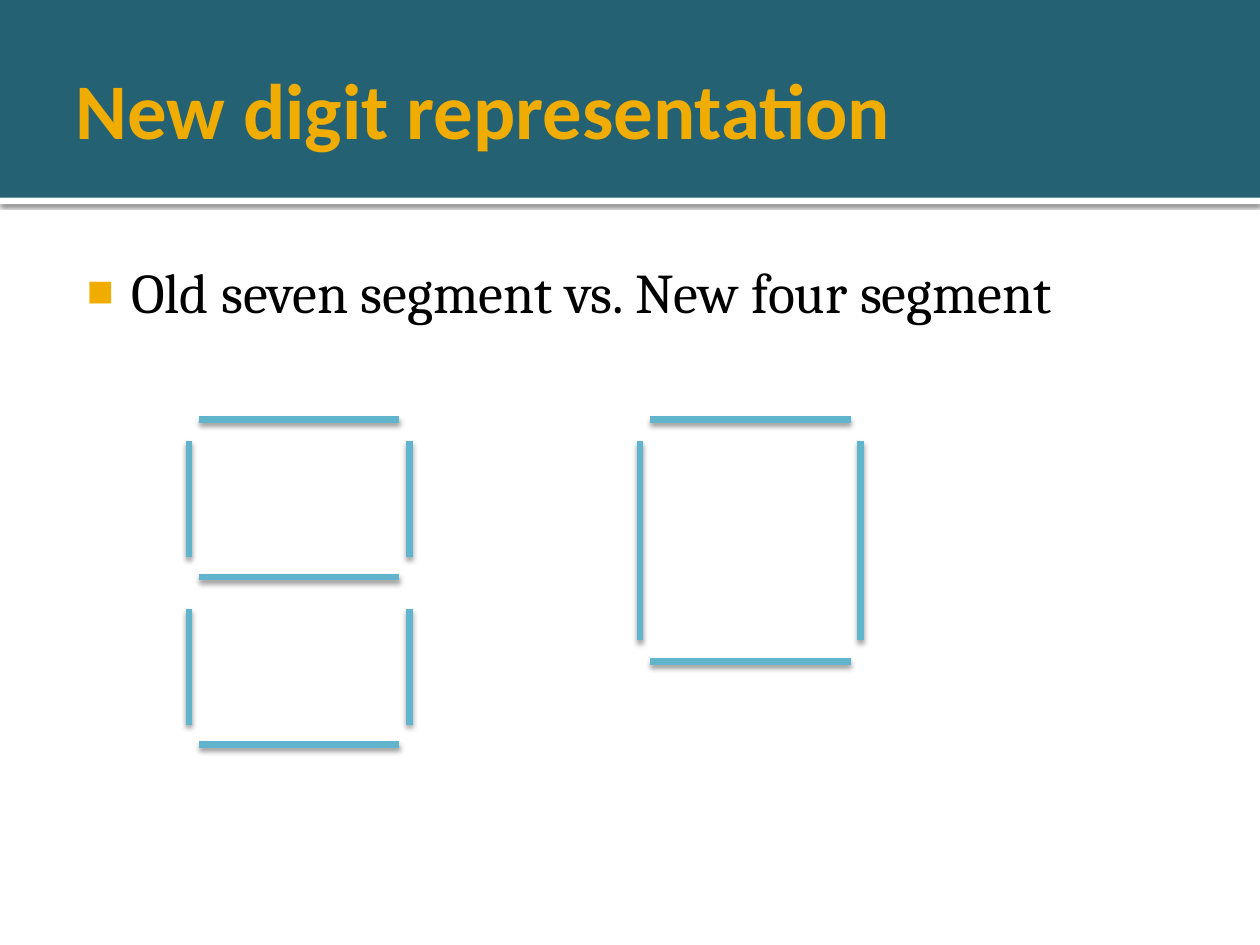
from lxml.etree import SubElement
from pptx import Presentation
from pptx.dml.color import RGBColor
from pptx.enum.shapes import MSO_CONNECTOR, MSO_SHAPE
from pptx.enum.text import MSO_ANCHOR, MSO_AUTO_SIZE, PP_ALIGN
from pptx.oxml.ns import qn
from pptx.util import Inches, Pt

# Content
TITLE = "New digit representation"
BULLET = "Old seven segment vs. New four segment"

# Digits: left edge of the uprights, y of the bars, (top, bottom) of the uprights
DIGITS = [
    {"left": 1.5, "bars": [3.33, 4.58, 5.91], "uprights": [(3.5, 4.42), (4.83, 5.75)]},
    {"left": 5.08, "bars": [3.33, 5.25], "uprights": [(3.5, 5.08)]},
]
DIGIT_WIDTH, BAR_INSET = 1.75, 0.08

THEME = {
    "teal": "246172", "white": "FFFFFF", "gold": "F0AD00",
    "black": "000000", "segment": "60B5CC",
    "title_font": "Calibri", "body_font": "Cambria",
    "title_size": 45, "body_size": 32, "segment_width": 3.82,
}


def rgb(name):
    return RGBColor.from_string(THEME[name])


def add_shadow(sp, alpha, blur, dist):
    """Give a shape a black shadow that falls straight down."""
    effects = SubElement(sp._element.spPr, qn("a:effectLst"))
    shadow = SubElement(effects, qn("a:outerShdw"), blurRad=str(Pt(blur)),
                        dist=str(Pt(dist)), dir="5400000", rotWithShape="0")
    color = SubElement(shadow, qn("a:srgbClr"), val=THEME["black"])
    SubElement(color, qn("a:alpha"), val=str(alpha * 1000))


def add_band(top, height, color):
    sp = slide.shapes.add_shape(MSO_SHAPE.RECTANGLE, 0, Inches(top),
                                prs.slide_width, Inches(height))
    sp.fill.solid()
    sp.fill.fore_color.rgb = rgb(color)
    sp.line.fill.background()
    return sp


def put_text(sp, text, box, insets, *, font, size, color, anchor, bold=False):
    """Place a placeholder and write one formatted paragraph in it."""
    sp.left, sp.top, sp.width, sp.height = map(Inches, box)
    tf = sp.text_frame
    tf.word_wrap = True
    tf.auto_size = MSO_AUTO_SIZE.NONE
    tf.vertical_anchor = anchor
    tf.margin_left, tf.margin_top, tf.margin_right, tf.margin_bottom = map(Inches, insets)
    p = tf.paragraphs[0]
    p.alignment = PP_ALIGN.LEFT
    p.space_before = Pt(0)
    r = p.add_run()
    r.text = text
    r.font.name, r.font.size, r.font.bold = font, Pt(size), bold
    r.font.color.rgb = rgb(color)
    return p


def add_bullet(p, char, color, percent, margin, indent):
    pPr = p._p.get_or_add_pPr()
    pPr.set("marL", str(Inches(margin)))
    pPr.set("indent", str(Inches(indent)))
    SubElement(SubElement(pPr, qn("a:buClr")), qn("a:srgbClr"), val=THEME[color])
    SubElement(pPr, qn("a:buSzPct"), val=str(percent * 1000))
    SubElement(pPr, qn("a:buChar"), char=char)


def add_segment(x1, y1, x2, y2):
    line = slide.shapes.add_connector(MSO_CONNECTOR.STRAIGHT,
                                      *map(Inches, (x1, y1, x2, y2)))
    line.line.color.rgb = rgb("segment")
    line.line.width = Pt(THEME["segment_width"])
    add_shadow(line, alpha=38, blur=3.1, dist=2)


def add_digit(left, bars, uprights):
    right = left + DIGIT_WIDTH
    for y in bars:
        add_segment(left + BAR_INSET, y, right - BAR_INSET, y)
    for top, bottom in uprights:
        for x in (left, right):
            add_segment(x, top, x, bottom)


prs = Presentation()
prs.slide_width, prs.slide_height = Inches(10), Inches(7.5)
slide = prs.slides.add_slide(prs.slide_layouts[1])
title, body = slide.placeholders

# Header bands, sent behind the placeholders
rule = add_band(1.57, 0.05, "white")
add_shadow(rule, alpha=60, blur=2.5, dist=0.8)
header = add_band(0, 1.57, "teal")
header.shadow.inherit = False
for i, band in enumerate((rule, header)):
    slide.shapes._spTree.insert(2 + i, band._element)

# Title and bullet
put_text(title, TITLE, (0.5, 0.17, 9, 1.37), (0.1, 0.05, 0.05, 0.05),
         font=THEME["title_font"], size=THEME["title_size"], color="gold",
         anchor=MSO_ANCHOR.MIDDLE, bold=True)
p = put_text(body, BULLET, (0.5, 1.94, 9, 5.06), (0.06, 0.1, 0.1, 0.05),
             font=THEME["body_font"], size=THEME["body_size"], color="black",
             anchor=MSO_ANCHOR.TOP)
add_bullet(p, "■", "gold", percent=80, margin=0.48, indent=-0.35)

# Segment digits
for digit in DIGITS:
    add_digit(**digit)

prs.save("out.pptx")
